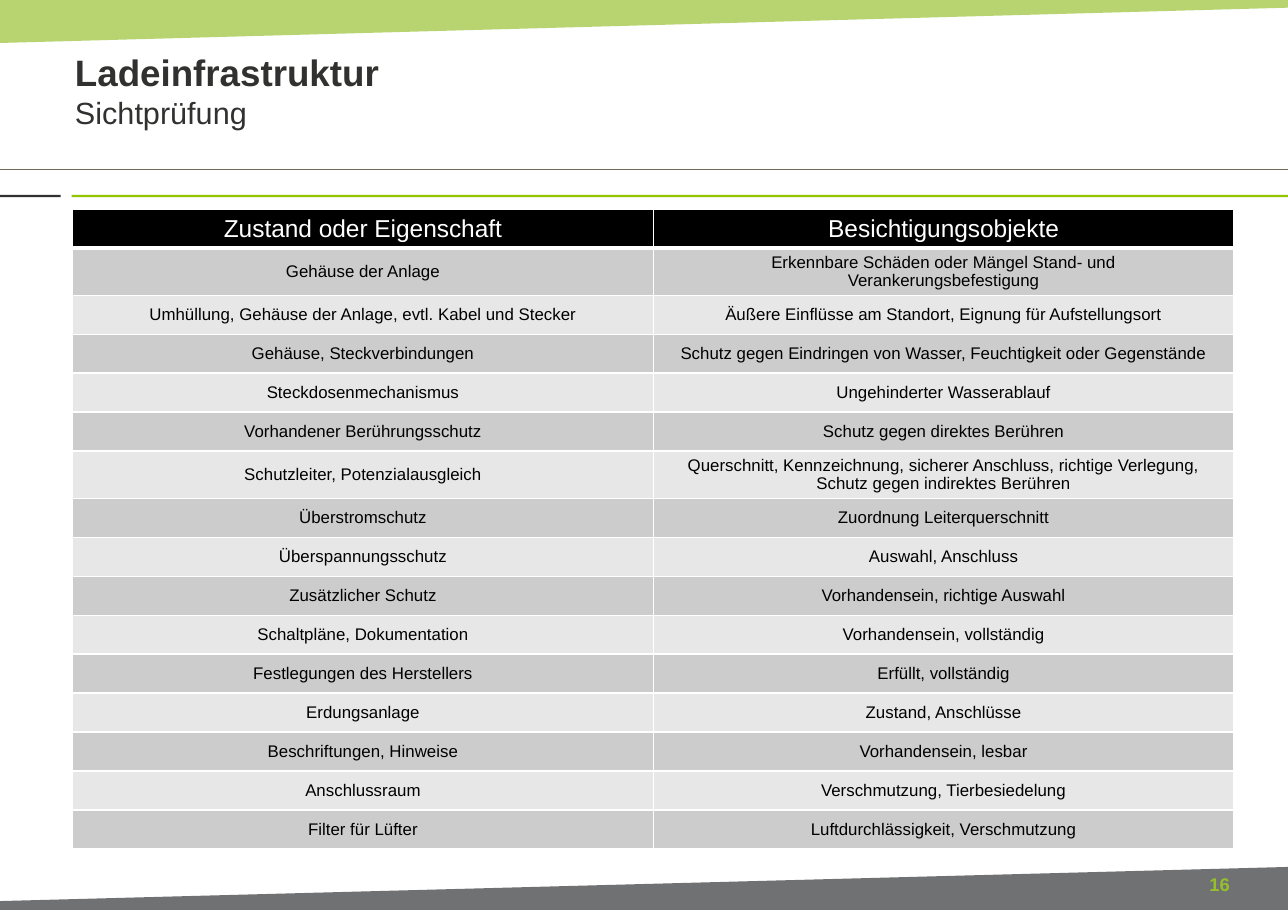
from lxml.etree import SubElement
from pptx import Presentation
from pptx.dml.color import RGBColor
from pptx.enum.shapes import MSO_CONNECTOR, MSO_SHAPE
from pptx.enum.text import MSO_ANCHOR, MSO_AUTO_SIZE, PP_ALIGN
from pptx.oxml import parse_xml
from pptx.oxml.ns import nsdecls, qn
from pptx.util import Inches, Pt

WIDTH, HEIGHT = 11.69, 8.27
WHITE, BLACK, DARK = "FFFFFF", "000000", "313130"
GREEN, BRIGHT_GREEN, GRAY = "95C02A", "94C600", "707173"
BANDS = ["CCCCCC", "E7E7E7"]

HEADINGS = ("Zustand oder Eigenschaft", "Besichtigungsobjekte")
INSPECTIONS = [
    ("Gehäuse der Anlage", "Erkennbare Schäden oder Mängel Stand- und\nVerankerungsbefestigung"),
    ("Umhüllung, Gehäuse der Anlage, evtl. Kabel und Stecker",
     "Äußere Einflüsse am Standort, Eignung für Aufstellungsort"),
    ("Gehäuse, Steckverbindungen",
     "Schutz gegen Eindringen von Wasser, Feuchtigkeit oder Gegenstände"),
    ("Steckdosenmechanismus", "Ungehinderter Wasserablauf"),
    ("Vorhandener Berührungsschutz", "Schutz gegen direktes Berühren"),
    ("Schutzleiter, Potenzialausgleich",
     "Querschnitt, Kennzeichnung, sicherer Anschluss, richtige Verlegung,\n"
     "Schutz gegen indirektes Berühren"),
    ("Überstromschutz", "Zuordnung Leiterquerschnitt"),
    ("Überspannungsschutz", "Auswahl, Anschluss"),
    ("Zusätzlicher Schutz", "Vorhandensein, richtige Auswahl"),
    ("Schaltpläne, Dokumentation", "Vorhandensein, vollständig"),
    ("Festlegungen des Herstellers", "Erfüllt, vollständig"),
    ("Erdungsanlage", "Zustand, Anschlüsse"),
    ("Beschriftungen, Hinweise", "Vorhandensein, lesbar"),
    ("Anschlussraum", "Verschmutzung, Tierbesiedelung"),
    ("Filter für Lüfter", "Luftdurchlässigkeit, Verschmutzung"),
]


def color(value):
    return RGBColor.from_string(value)


def write(paragraph, text, size, ink, bold=False, align=PP_ALIGN.LEFT, spacing=None):
    paragraph.alignment = align
    if spacing:
        paragraph.line_spacing = spacing
    run = paragraph.add_run()
    run.text = text
    run.font.name = "Arial"
    run.font.size = Pt(size)
    run.font.bold = bold
    run.font.color.rgb = color(ink)


def set_frame(frame):
    frame.word_wrap = True
    frame.auto_size = MSO_AUTO_SIZE.NONE
    frame.vertical_anchor = MSO_ANCHOR.MIDDLE
    frame.margin_left = frame.margin_right = Inches(0.11)
    frame.margin_top = frame.margin_bottom = Inches(0.06)


def paint(shape, fill):
    shape.shadow.inherit = False
    shape.fill.solid()
    shape.fill.fore_color.rgb = color(fill)
    shape.line.fill.background()


def add_wedge(slide, corners, fill, opacity=100):
    points = [(Inches(x), Inches(y)) for x, y in corners]
    builder = slide.shapes.build_freeform(*points[0])
    builder.add_line_segments(points[1:], close=True)
    wedge = builder.convert_to_shape()
    paint(wedge, fill)
    if opacity < 100:
        tint = wedge.fill._xPr.find(qn("a:solidFill"))[0]
        SubElement(tint, qn("a:alpha"), val=str(opacity * 1000))


def add_header_band(slide, left, top, width, height):
    right = left + width
    add_wedge(slide, [(left, top), (right, top), (right, top + 0.07), (left, top + height)],
              GREEN, opacity=67)


def add_footer_band(slide, left, top, width, height):
    right, bottom = left + width, top + height
    add_wedge(slide, [(right, bottom), (left, bottom), (left, bottom - 0.08), (right, top)], GRAY)


def add_rules(slide, left, top, width):
    hairline = slide.shapes.add_connector(
        MSO_CONNECTOR.STRAIGHT, Inches(left + width), Inches(top), Inches(left), Inches(top))
    hairline.line.color.rgb = color("71685A")
    hairline.line.width = Pt(0.75)
    SubElement(hairline._element.spPr, qn("a:effectLst"))
    for start, length, fill in [(0, 0.55, DARK), (0.65, width - 0.65, BRIGHT_GREEN)]:
        bar = slide.shapes.add_shape(MSO_SHAPE.RECTANGLE, Inches(left + start),
                                     Inches(top + 0.23), Inches(length), Inches(0.02))
        paint(bar, fill)


def add_title(slide, left, top, width, height):
    title = slide.shapes.title
    title.left, title.top = Inches(left), Inches(top)
    title.width, title.height = Inches(width), Inches(height)
    set_frame(title.text_frame)
    heading = title.text_frame.paragraphs[0]
    write(heading, "Ladeinfrastruktur", 24, DARK, bold=True)
    heading.add_line_break()
    write(heading, "Sichtprüfung", 20, DARK)


def add_border(cell, side, position, points):
    cell._tc.get_or_add_tcPr().insert(position, parse_xml(
        f'<a:{side} {nsdecls("a")} w="{Pt(points)}"><a:solidFill>'
        f'<a:srgbClr val="{WHITE}"/></a:solidFill></a:{side}>'))


def fill_cell(cell, text, size, ink, fill, top_border, bottom_border):
    cell.vertical_anchor = MSO_ANCHOR.MIDDLE
    cell.margin_top = cell.margin_bottom = Inches(0.04)
    cell.fill.solid()
    cell.fill.fore_color.rgb = color(fill)
    borders = {"lnL": 1, "lnR": 1, "lnT": top_border, "lnB": bottom_border}
    for position, (side, points) in enumerate(borders.items()):
        add_border(cell, side, position, points)
    for index, line in enumerate(text.split("\n")):
        frame = cell.text_frame
        paragraph = frame.add_paragraph() if index else frame.paragraphs[0]
        write(paragraph, line, size, ink, align=PP_ALIGN.CENTER)


def add_inspection_table(slide, left, top, width, height):
    entries = [HEADINGS] + INSPECTIONS
    table = slide.shapes.add_table(len(entries), 2, Inches(left), Inches(top),
                                   Inches(width), Inches(height)).table
    table.first_row = table.horz_banding = False
    header_height, double_height = 0.35, 0.43
    doubles = sum("\n" in objects for _, objects in INSPECTIONS)
    single_height = ((height - header_height - doubles * double_height)
                     / (len(INSPECTIONS) - doubles))
    for row, entry in enumerate(entries):
        if row == 0:
            row_height, size, ink, fill = header_height, 16, WHITE, BLACK
        else:
            row_height = double_height if "\n" in entry[1] else single_height
            size, ink, fill = 11, BLACK, BANDS[(row - 1) % 2]
        table.rows[row].height = Inches(row_height)
        for column, text in enumerate(entry):
            fill_cell(table.cell(row, column), text, size, ink, fill,
                      top_border=3 if row == 1 else 1, bottom_border=3 if row == 0 else 1)


def add_page_number(slide, left, top, width, height):
    number = slide.shapes.add_textbox(Inches(left), Inches(top), Inches(width), Inches(height))
    set_frame(number.text_frame)
    write(number.text_frame.paragraphs[0], "16", 12, GREEN, bold=True,
          align=PP_ALIGN.CENTER, spacing=0.9)


def main():
    presentation = Presentation()
    presentation.slide_width, presentation.slide_height = Inches(WIDTH), Inches(HEIGHT)
    slide = presentation.slides.add_slide(presentation.slide_layouts[5])
    add_header_band(slide, 0, 0, WIDTH, 0.39)
    add_footer_band(slide, 0, 7.87, WIDTH, 0.39)
    add_rules(slide, 0, 1.54, WIDTH)
    add_title(slide, 0.57, 0.35, 7.32, 0.93)
    add_inspection_table(slide, 0.66, 1.9, 10.54, 5.81)
    add_page_number(slide, 10.73, 7.89, 0.68, 0.29)
    presentation.save("out.pptx")


if __name__ == "__main__":
    main()
